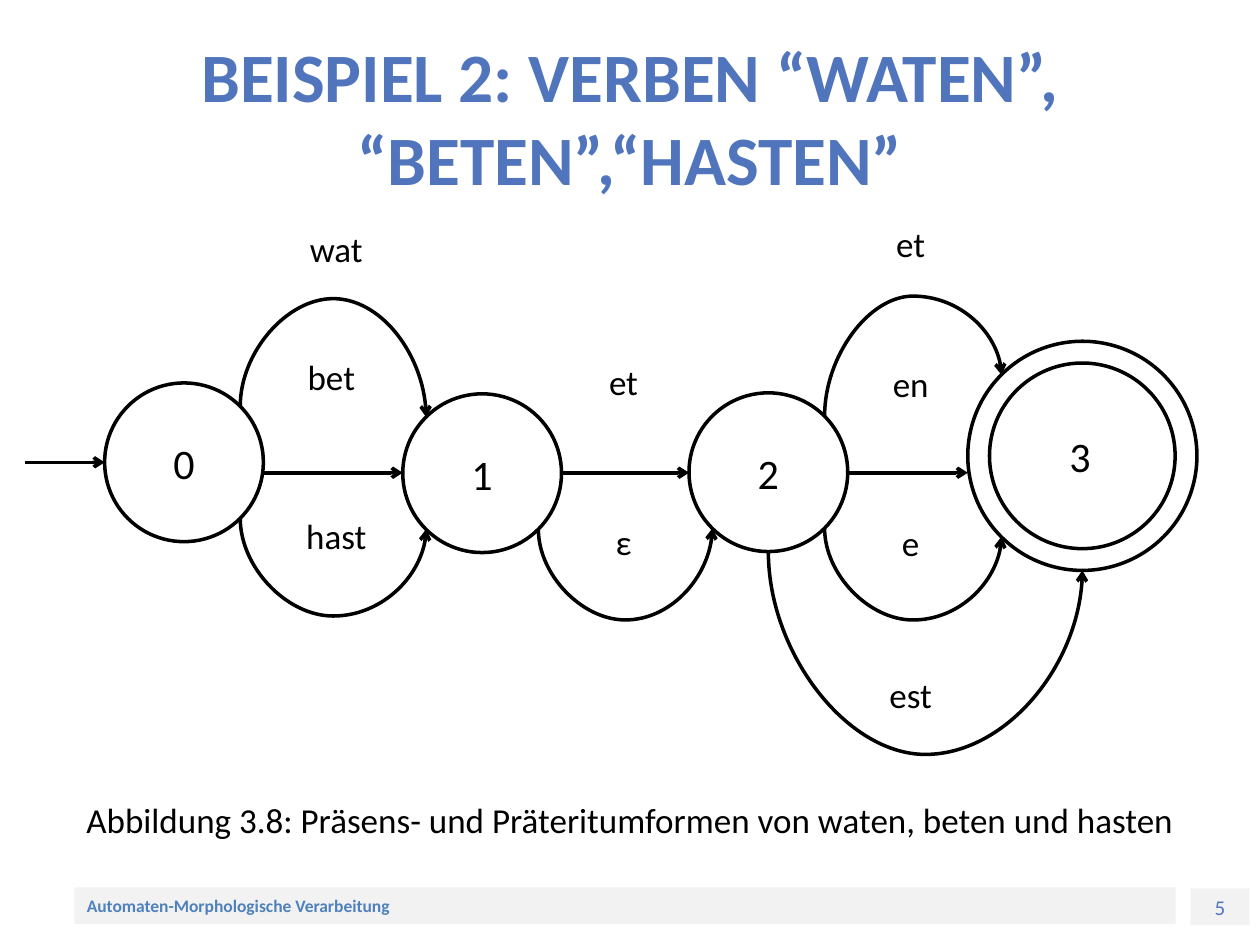
from math import cos, pi, sin

from lxml import etree
from pptx import Presentation
from pptx.dml.color import RGBColor
from pptx.enum import shapes as kinds, text as modes
from pptx.oxml.ns import qn
from pptx.util import Cm, Pt

BLACK = RGBColor(0, 0, 0)
WHITE = RGBColor(255, 255, 255)
GREY = RGBColor(0xF2, 0xF2, 0xF2)
BLUE = RGBColor(0x50, 0x75, 0xBC)
SKY = RGBColor(0x4F, 0x81, 0xBD)


def write(shape, words, size, color=BLACK, bold=False, align=modes.PP_ALIGN.CENTER, wrap=True):
    frame = shape.text_frame
    frame.text = words
    frame.word_wrap = wrap
    frame.vertical_anchor = modes.MSO_ANCHOR.MIDDLE
    par = frame.paragraphs[0]
    par.alignment = align
    par.font.color.rgb = color
    for key, value in {"name": "Calibri", "size": Pt(size), "bold": bold}.items():
        setattr(par.font, key, value)


def arrow(kind, *ends):
    """Add a black connector with an open arrowhead at its end."""
    link = slide.shapes.add_connector(kind, *map(Cm, ends))
    link.line.color.rgb = BLACK
    link.line.width = Pt(2)
    props = link._element.spPr
    etree.SubElement(props.find(qn("a:ln")), qn("a:tailEnd"), type="arrow")
    etree.SubElement(props, qn("a:effectLst"))
    return link


deck = Presentation()
deck.slide_width, deck.slide_height = Cm(25.4), Cm(19.05)
slide = deck.slides.add_slide(deck.slide_layouts[5])

# Footer bars
bars = [
    (24, 17.91, 1.19, "5", {"size": 12, "color": BLUE}),
    (1.5, 17.89, 22.2, "Automaten-Morphologische Verarbeitung",
     {"size": 10, "color": SKY, "bold": True, "align": modes.PP_ALIGN.LEFT}),
]
for left, top, width, words, style in bars:
    bar = slide.shapes.add_shape(kinds.MSO_SHAPE.RECTANGLE,
                                 Cm(left), Cm(top), Cm(width), Cm(0.74))
    bar.shadow.inherit = False
    bar.fill.solid()
    bar.fill.fore_color.rgb = GREY
    bar.line.fill.background()
    write(bar, words, **style)

# Title
title = slide.shapes.title
box = {"left": 1.27, "top": 0.76, "width": 22.86, "height": 3.18}
for key, value in box.items():
    setattr(title, key, Cm(value))
write(title, "BEISPIEL 2: VERBEN “WATEN”, “BETEN”,“HASTEN”", 39.6, BLUE, True)

# States: centre x, centre y, radius; the last one is final
states = [(3.71, 9.32, 1.6), (9.72, 9.54, 1.6), (15.49, 9.52, 1.6), (21.82, 9.19, 2.31)]
nodes = []
for num, (x, y, rad) in enumerate(states):
    final = num == len(states) - 1
    kind = kinds.MSO_SHAPE.DONUT if final else kinds.MSO_SHAPE.OVAL
    node = slide.shapes.add_shape(kind, Cm(x - rad), Cm(y - rad), Cm(2 * rad), Cm(2 * rad))
    node.shadow.inherit = False
    node.fill.solid()
    node.fill.fore_color.rgb = WHITE
    node.line.color.rgb = BLACK
    node.line.width = Pt(2)
    if final:
        node.adjustments[0] = 0.095
    else:
        write(node, str(num), 24)
    nodes.append(node)

# Straight transitions: start x, end x, y
for start, end, y in [(0.5, 2.11, 9.32), (5.31, 8.12, 9.53),
                      (11.32, 13.89, 9.53), (17.09, 19.51, 9.53)]:
    arrow(kinds.MSO_CONNECTOR.STRAIGHT, start, y, end, y)

# Curved transitions: (state, site) to (state, site), height of the bend.
# Sites run anticlockwise from the top in steps of 45 degrees.
arcs = [
    ((0, 7), (1, 1), 6.02),
    ((2, 4), (3, 4), 15.21),
    ((2, 5), (3, 3), 12.5),
    ((1, 5), (2, 3), 12.5),
    ((0, 5), (1, 3), 12.42),
    ((2, 7), (3, 1), 5.97),
]
for start, end, bend in arcs:
    link = arrow(kinds.MSO_CONNECTOR.CURVE, 0, 0, 0, 0)
    glue = link._element.find(".//" + qn("p:cNvCxnSpPr"))
    ends = []
    for tag, (num, site) in (("a:stCxn", start), ("a:endCxn", end)):
        x, y, rad = states[num]
        turn = site * pi / 4
        ends.append((x - rad * sin(turn), y - rad * cos(turn)))
        etree.SubElement(glue, qn(tag), id=str(nodes[num].shape_id), idx=str(site))
    (x1, y1), (x2, y2) = ends
    # The connector lies on its side, so its width is the vertical distance
    wide, high = abs(y2 - y1), x2 - x1
    box = {"left": (x1 + x2 - wide) / 2, "top": (y1 + y2 - high) / 2,
           "width": wide, "height": high}
    for key, value in box.items():
        setattr(link, key, Cm(value))
    rises = y2 < y1
    frame = link._element.find(".//" + qn("a:xfrm"))
    frame.set("rot", str((90 if rises else 270) * 60000))
    frame.set("flipH", "1")
    frame.set("flipV", "1" if rises else "0")
    ratio = round((bend - y1) / (y2 - y1) * 100000)
    etree.SubElement(link._element.find(".//" + qn("a:avLst")), qn("a:gd"),
                     name="adj1", fmla=f"val {ratio}")

# Labels: centre x, centre y, width, words, size
labels = [
    (21.77, 9.19, 2.54, "3", 24),
    (6.68, 7.59, 2.54, "bet", 20),
    (6.78, 5, 2.54, "wat", 20),
    (6.78, 10.8, 2.54, "hast", 20),
    (12.57, 10.92, 2.54, "ε", 20),
    (12.57, 7.7, 2.54, "et", 20),
    (18.36, 14, 2.54, "est", 20),
    (18.36, 10.93, 2.54, "e", 20),
    (18.36, 7.73, 2.54, "en", 20),
    (18.36, 4.91, 2.54, "et", 20),
    (12.7, 16.52, 22.8,
     "Abbildung 3.8: Präsens- und Präteritumformen von waten, beten und hasten", 20),
]
for x, y, width, words, size in labels:
    label = slide.shapes.add_textbox(Cm(x - width / 2), Cm(y - 0.8), Cm(width), Cm(1.6))
    write(label, words, size, wrap=False)

deck.save("out.pptx")
